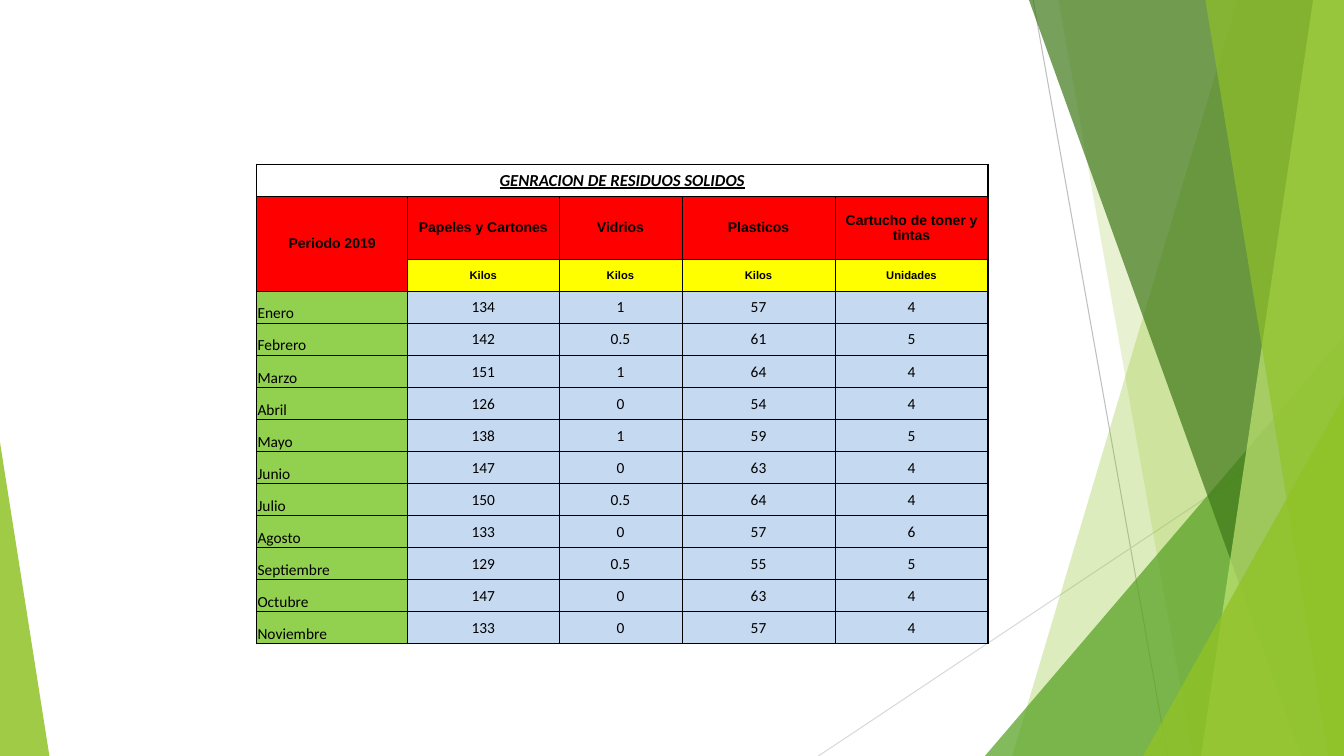
from pptx import Presentation
from pptx import util as u
from pptx.dml.color import RGBColor
from pptx.enum import shapes, text
from pptx.oxml import parse_xml
from pptx.oxml.ns import nsdecls, qn

LIME = RGBColor(0x90, 0xC2, 0x26)
PALE = RGBColor(0xC0, 0xE4, 0x74)
GREEN = RGBColor(0x54, 0xA0, 0x21)
DARK = RGBColor(0x3F, 0x78, 0x19)
GRAY = RGBColor(0xBF, 0xBF, 0xBF)
SILVER = RGBColor(0xD9, 0xD9, 0xD9)
BLACK = RGBColor(0, 0, 0)
RED = RGBColor(0xFF, 0, 0)
YELLOW = RGBColor(0xFF, 0xFF, 0)
MONTH = RGBColor(0x92, 0xD0, 0x50)
BLUE = RGBColor(0xC5, 0xD9, 0xF1)

WIDE, HIGH = 960, 540
COLS = [108, 108, 88, 109.3, 109.3]
ROW, HEAD = 22.9, 45

ROWS = [
    ["GENRACION DE RESIDUOS SOLIDOS", "", "", "", ""],
    ["Periodo 2019", "Papeles y Cartones", "Vidrios", "Plasticos",
     "Cartucho de toner y tintas"],
    ["", "Kilos", "Kilos", "Kilos", "Unidades"],
    ["Enero", "134", "1", "57", "4"],
    ["Febrero", "142", "0.5", "61", "5"],
    ["Marzo", "151", "1", "64", "4"],
    ["Abril", "126", "0", "54", "4"],
    ["Mayo", "138", "1", "59", "5"],
    ["Junio", "147", "0", "63", "4"],
    ["Julio", "150", "0.5", "64", "4"],
    ["Agosto", "133", "0", "57", "6"],
    ["Septiembre", "129", "0.5", "55", "5"],
    ["Octubre", "147", "0", "63", "4"],
    ["Noviembre", "133", "0", "57", "4"],
]


class Deck:
    def __init__(self):
        self.show = Presentation()
        self.show.slide_width = u.Pt(WIDE)
        self.show.slide_height = u.Pt(HIGH)
        self.slide = self.show.slides.add_slide(self.show.slide_layouts[6])
        self.items = self.slide.shapes

    def line(self, x1, y1, x2, y2, color):
        line = self.items.add_connector(
            shapes.MSO_CONNECTOR.STRAIGHT,
            u.Pt(x1), u.Pt(y1), u.Pt(x2), u.Pt(y2))
        line.line.color.rgb = color
        line.line.width = u.Pt(0.75)
        props = line._element.find(qn("p:spPr"))
        props.append(parse_xml(f"<a:effectLst {nsdecls('a')}/>"))

    def paint(self, shape, color, alpha):
        shape.shadow.inherit = False
        shape.line.fill.background()
        shape.fill.solid()
        shape.fill.fore_color.rgb = color
        tint = shape._element.find(".//" + qn("a:srgbClr"))
        tint.append(parse_xml(
            f'<a:alpha {nsdecls("a")} val="{alpha * 1000}"/>'))

    def wedge(self, top, foot, color, alpha):
        pen = self.items.build_freeform(u.Pt(top), 0)
        pen.add_line_segments([
            (u.Pt(WIDE), 0), (u.Pt(WIDE), u.Pt(HIGH)), (u.Pt(foot), u.Pt(HIGH))])
        self.paint(pen.convert_to_shape(), color, alpha)

    def peak(self, left, top, width, apex, color, alpha):
        shape = self.items.add_shape(
            shapes.MSO_SHAPE.ISOSCELES_TRIANGLE,
            u.Pt(left), u.Pt(top), u.Pt(width), u.Pt(HIGH - top))
        shape.adjustments[0] = apex
        self.paint(shape, color, alpha)

    def border(self, cell, row, col):
        edges = {"L": col == 0, "R": col == len(COLS) - 1 or row == 0,
                 "T": row == 0, "B": False}
        props = cell._tc.get_or_add_tcPr()
        for side, outer in edges.items():
            width = u.Pt(1 if outer else 0.5)
            props.append(parse_xml(
                f'<a:ln{side} {nsdecls("a")} w="{width}"><a:solidFill>'
                f'<a:srgbClr val="{BLACK}"/></a:solidFill></a:ln{side}>'))

    def style(self, row, col):
        if row == 0:
            return None, "Calibri", 12
        if row == 1 or (row == 2 and col == 0):
            return RED, "Arial", 10
        if row == 2:
            return YELLOW, "Arial", 8
        return (BLUE if col else MONTH), "Calibri", 11

    def cell(self, cell, words, row, col):
        color, face, size = self.style(row, col)
        name = row > 2 and col == 0
        self.border(cell, row, col)
        if color is None:
            cell.fill.background()
        else:
            cell.fill.solid()
            cell.fill.fore_color.rgb = color
        cell.margin_left = cell.margin_right = cell.margin_top = u.Pt(0.75)
        cell.margin_bottom = 0
        cell.vertical_anchor = (text.MSO_ANCHOR.BOTTOM if name
                                else text.MSO_ANCHOR.MIDDLE)
        cell.text = words
        para = cell.text_frame.paragraphs[0]
        para.alignment = text.PP_ALIGN.LEFT if name else text.PP_ALIGN.CENTER
        font = para.font
        font.name, font.size, font.color.rgb = face, u.Pt(size), BLACK
        font.bold = row < 3
        font.italic = font.underline = row == 0

    def table(self, left, top):
        heights = [HEAD if row == 1 else ROW for row in range(len(ROWS))]
        table = self.items.add_table(
            len(ROWS), len(COLS), u.Pt(left), u.Pt(top),
            u.Pt(sum(COLS)), u.Pt(sum(heights))).table
        table.first_row = table.horz_banding = False
        for col, width in enumerate(COLS):
            table.columns[col].width = u.Pt(width)
        for row, words in enumerate(ROWS):
            table.rows[row].height = u.Pt(heights[row])
            for col, word in enumerate(words):
                self.cell(table.cell(row, col), word, row, col)
        table.cell(0, 0).merge(table.cell(0, len(COLS) - 1))
        table.cell(1, 0).merge(table.cell(2, 0))


def main():
    deck = Deck()
    deck.line(738, 0, 834, HIGH, GRAY)
    deck.line(WIDE, 290, 584.6, HIGH, SILVER)
    deck.wedge(884, 723, LIME, 30)
    deck.wedge(756, 852, LIME, 20)
    deck.peak(703.5, 240, 256.5, 1, GREEN, 72)
    deck.wedge(735, 929.5, DARK, 70)
    deck.wedge(938, 858, PALE, 70)
    deck.wedge(861, 949, LIME, 65)
    deck.peak(816.5, 283, 143.5, 1, LIME, 80)
    deck.peak(0, 316, 35.3, 0, LIME, 85)
    deck.table(183.2, 117.2)
    deck.show.save("out.pptx")


if __name__ == "__main__":
    main()
